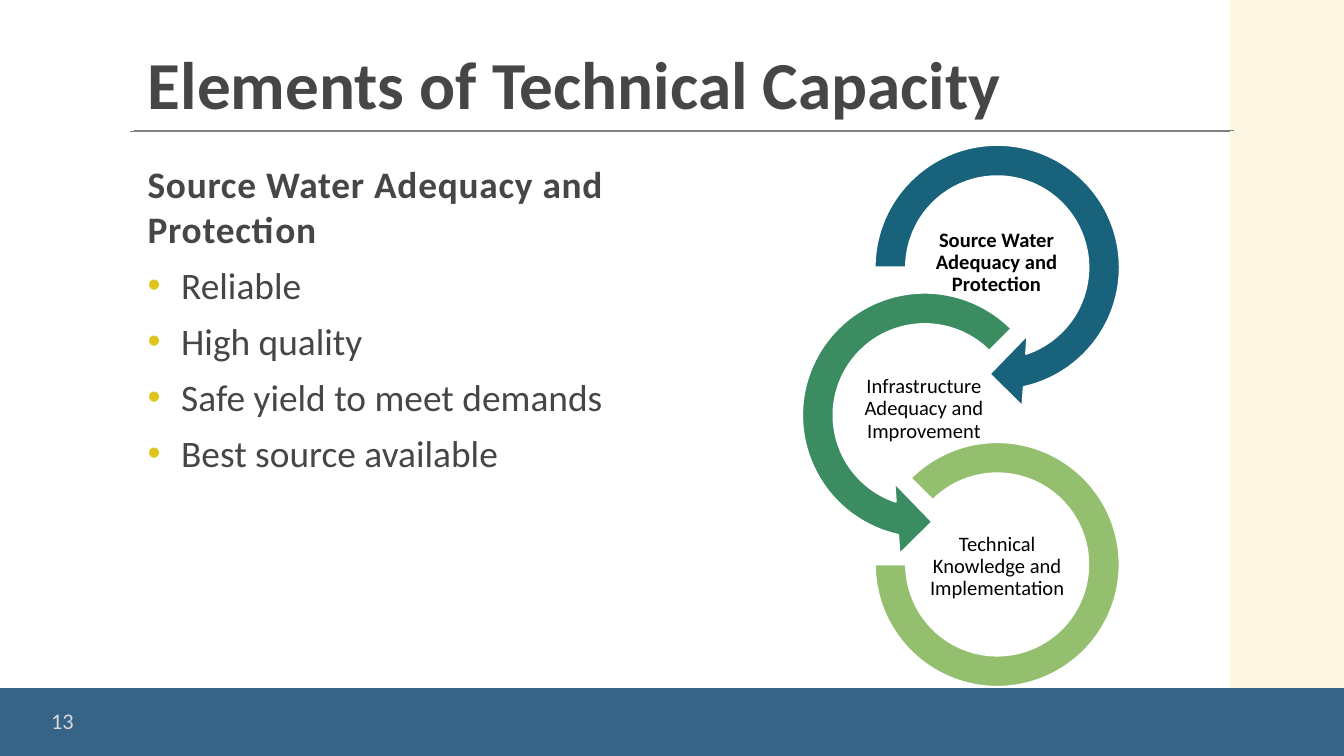
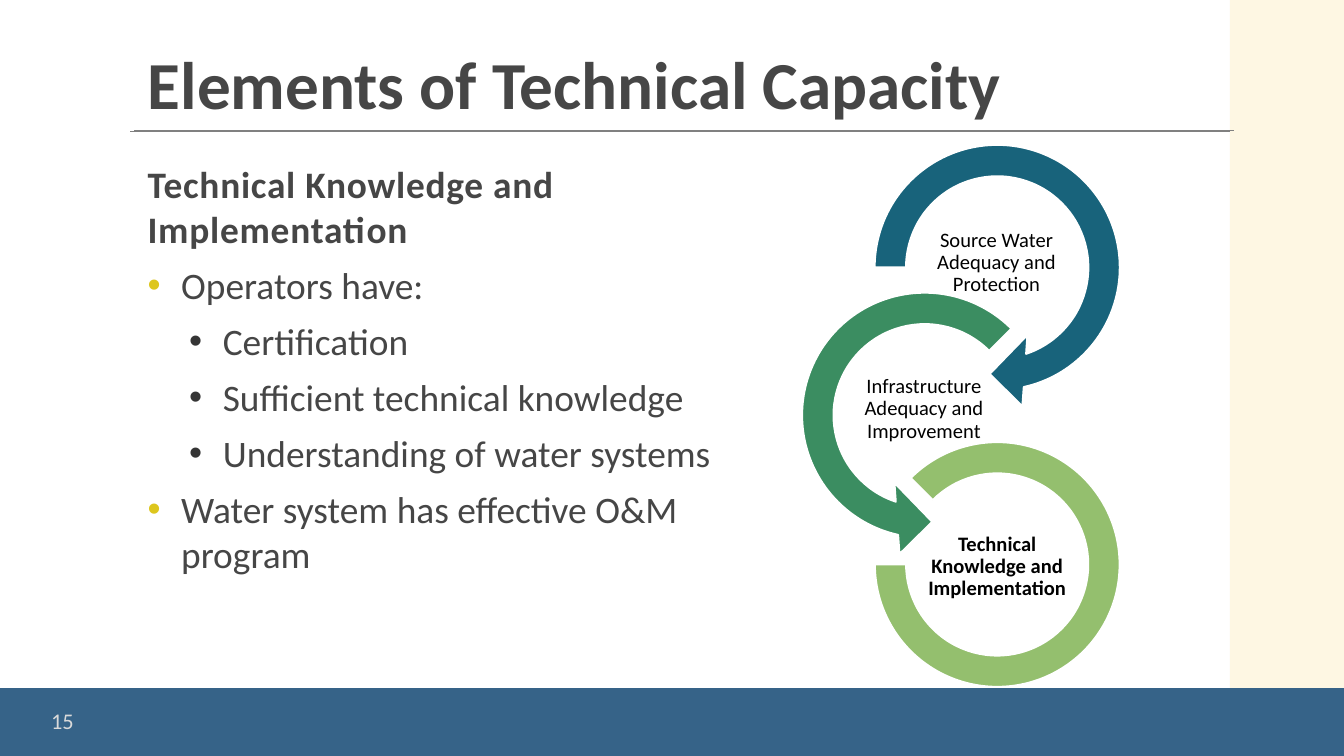
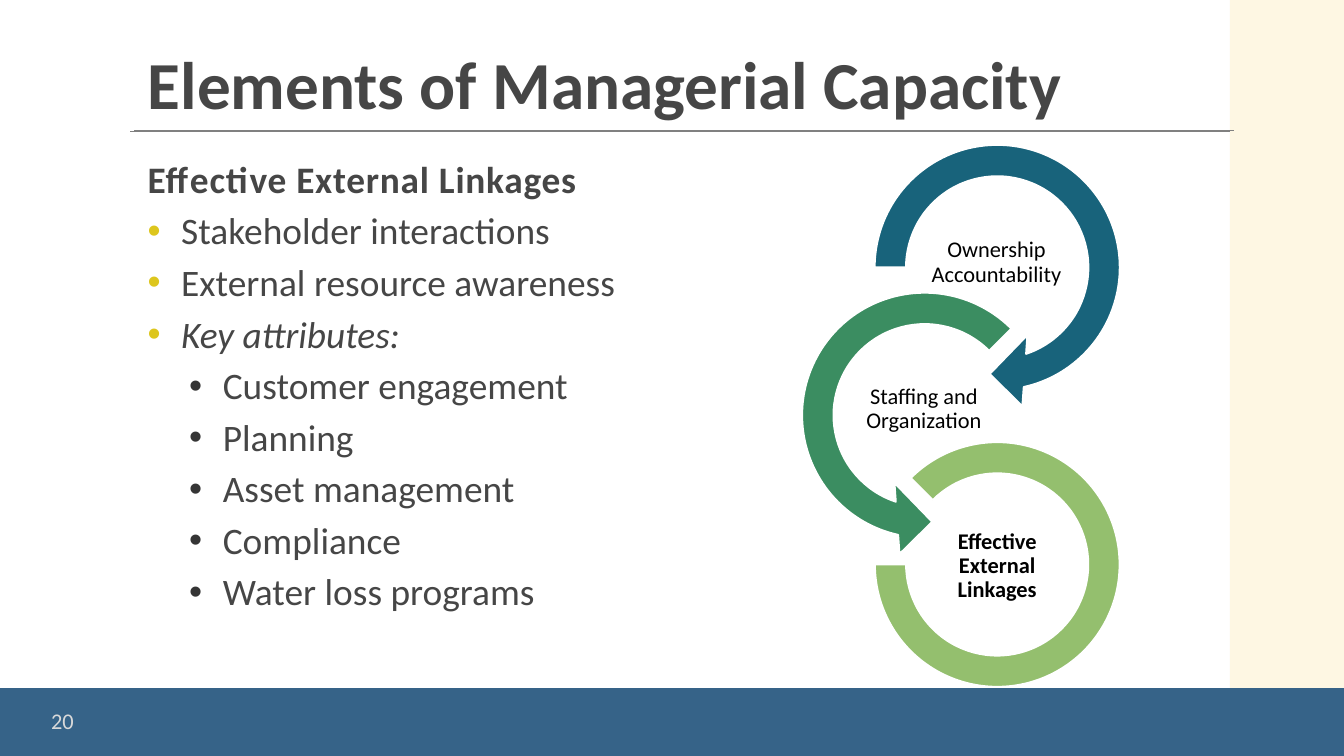
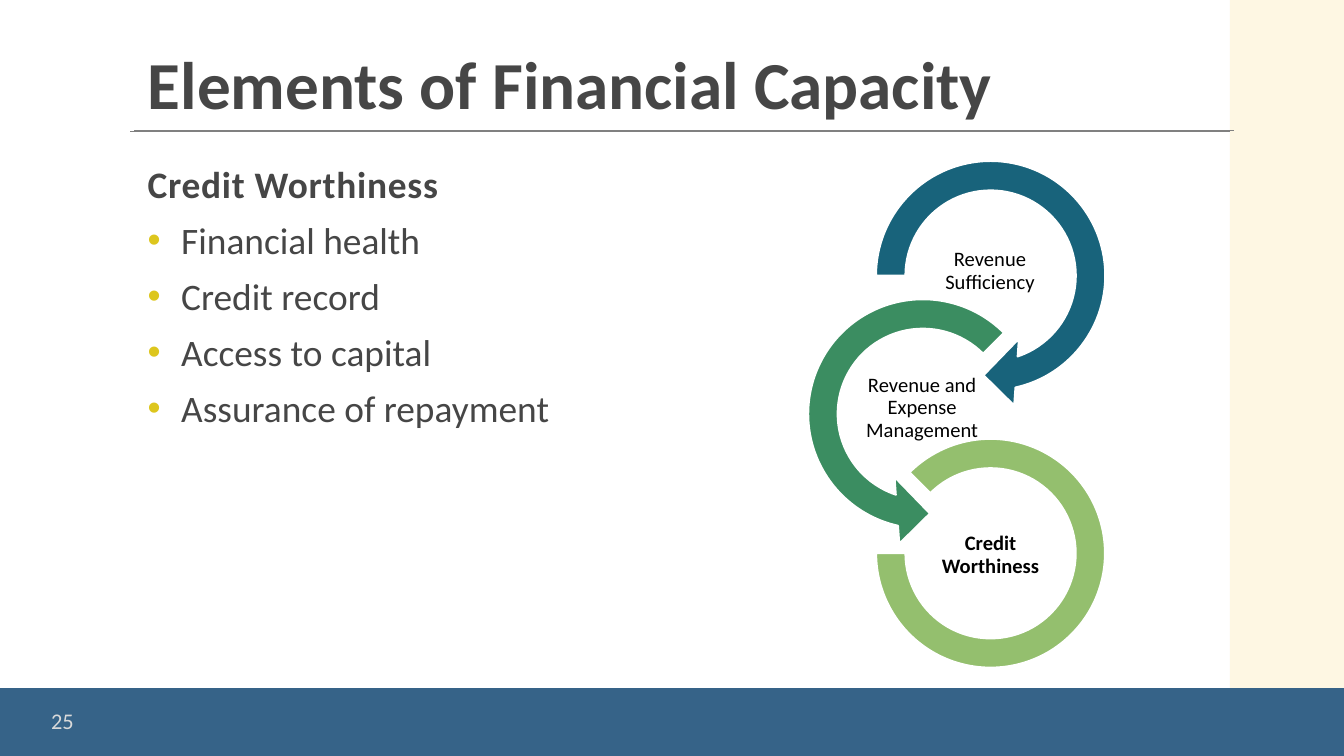
from lxml import etree
from pptx import Presentation
from pptx.dml.color import RGBColor
from pptx.enum import shapes, text
from pptx.oxml import ns
from pptx.util import Inches, Pt

FONT = "Calibri"
GREY = RGBColor(0x46, 0x46, 0x46)
DARK = RGBColor(0x35, 0x35, 0x35)
RULE = RGBColor(0x80, 0x80, 0x80)
PALE = RGBColor(0xD9, 0xD9, 0xD9)
GOLD = RGBColor(0xDD, 0xC6, 0x1D)
CREAM = RGBColor(0xFE, 0xF7, 0xE3)
BLUE = RGBColor(0x36, 0x63, 0x88)
TEAL = RGBColor(0x18, 0x63, 0x7B)
GREEN = RGBColor(0x3B, 0x8D, 0x61)
LIME = RGBColor(0x94, 0xBF, 0x6E)
BLACK = RGBColor(0, 0, 0)
WHITE = RGBColor(255, 255, 255)

LEFT, MID = text.PP_ALIGN.LEFT, text.PP_ALIGN.CENTER
KIND = shapes.MSO_SHAPE

# Bullet style by level: indent in inches and bullet colour
MARKS = {1: (0.25, GOLD), 2: (0.56, DARK)}

# Ring parts: shape, colour, offset, size, adjustments
RINGS = [
    (KIND.CIRCULAR_ARROW, TEAL, 0, 0, 2.12, (0.1098, 11.42, 45, 108, 0.125)),
    (KIND.LEFT_CIRCULAR_ARROW, GREEN, -0.54, 1.1, 2.12,
     (0.1098, 11.42, 63, 189, 0.125)),
    (KIND.BLOCK_ARC, LIME, 0.15, 2.36, 1.82, (135, 108, 0.1274)),
]
# Label boxes: offset, width, height
LABELS = [(0.52, 0.76, 1.07, 0.53), (-0.02, 1.85, 1.07, 0.53),
          (0.51, 2.99, 1.1, 0.59)]

# Each slide: number, title, body width, line spacing, body lines (level, text),
# ring start and scale, label size, ring labels, index of the bold label
TECH = ["Source Water Adequacy and Protection",
        "Infrastructure Adequacy and Improvement",
        "Technical Knowledge and Implementation"]
SLIDES = [
    ("13", "Elements of Technical Capacity", 4.46, 1,
     [(0, "Source Water Adequacy and Protection"),
      (1, "Reliable"),
      (1, "High quality"),
      (1, "Safe yield to meet demands"),
      (1, "Best source available")],
     (6.36, 0.93, 1), 11, TECH, 0),
    ("15", "Elements of Technical Capacity", 4.46, 1,
     [(0, "Technical Knowledge and Implementation"),
      (1, "Operators have:"),
      (2, "Certification"),
      (2, "Sufficient technical knowledge"),
      (2, "Understanding of water systems"),
      (1, "Water system has effective O&M program")],
     (6.36, 0.93, 1), 11, TECH, 2),
    ("20", "Elements of Managerial Capacity", 3.96, 0.9,
     [(0, "Effective External Linkages"),
      (1, "Stakeholder interactions"),
      (1, "External resource awareness"),
      (1, "Key attributes:"),
      (2, "Customer engagement"),
      (2, "Planning"),
      (2, "Asset management"),
      (2, "Compliance"),
      (2, "Water loss programs")],
     (6.36, 0.93, 1), 12,
     ["Ownership Accountability", "Staffing and Organization",
      "Effective External Linkages"], 2),
    ("25", "Elements of Financial Capacity", 3.96, 1,
     [(0, "Credit Worthiness"),
      (1, "Financial health"),
      (1, "Credit record"),
      (1, "Access to capital"),
      (1, "Assurance of repayment")],
     (6.38, 1.06, 0.935), 11,
     ["Revenue Sufficiency", "Revenue and Expense Management",
      "Credit Worthiness"], 2),
]


def write(box, words, size=20, color=GREY, bold=False, italic=False,
          align=LEFT, gap=1, after=0, level=0, track=0, inset=None,
          anchor=text.MSO_ANCHOR.TOP):
    """Put one paragraph into a box, after any that it already holds."""
    frame = box.text_frame
    frame.word_wrap = True
    frame.auto_size = text.MSO_AUTO_SIZE.NONE
    frame.vertical_anchor = anchor
    if inset is not None:
        frame.margin_left = frame.margin_right = Inches(inset)
        frame.margin_top = frame.margin_bottom = Inches(inset)
    para = frame.add_paragraph() if frame.text else frame.paragraphs[0]
    para.alignment = align
    para.line_spacing = gap
    para.space_before, para.space_after = Pt(0), Pt(after)
    if level:
        indent, tint = MARKS[level]
        para.level = level
        props = para._p.get_or_add_pPr()
        props.set("marL", str(Inches(indent)))
        props.set("indent", str(Inches(-0.25)))
        hue = etree.SubElement(props, ns.qn("a:buClr"))
        etree.SubElement(hue, ns.qn("a:srgbClr"), val=str(tint))
        etree.SubElement(props, ns.qn("a:buFont"), typeface="Arial")
        etree.SubElement(props, ns.qn("a:buChar"), char="•")
    run = para.add_run()
    run.text = words
    run.font.name, run.font.size = FONT, Pt(size)
    run.font.bold, run.font.italic = bold, italic
    run.font.color.rgb = color
    if track:
        run.font._element.set("spc", str(round(track * 100)))


def draw(home, kind, color, x, y, wide, high, edge=None):
    """Add a plain filled shape."""
    form = home.add_shape(kind, Inches(x), Inches(y), Inches(wide), Inches(high))
    form.shadow.inherit = False
    form.fill.solid()
    form.fill.fore_color.rgb = color
    if edge is None:
        form.line.fill.background()
    else:
        form.line.color.rgb = edge
        form.line.width = Pt(1)
    return form


deck = Presentation()
deck.slide_width, deck.slide_height = Inches(10), Inches(5.625)

for num, title, width, gap, lines, start, size, labels, strong in SLIDES:
    slide = deck.slides.add_slide(deck.slide_layouts[5])
    items = slide.shapes

    # Side band, footer band and double rule under the title
    draw(items, KIND.RECTANGLE, CREAM, 9.15, 0, 0.85, 5.62)
    draw(items, KIND.RECTANGLE, BLUE, 0, 5.12, 10, 0.51)
    for x1, x2, y in [(1, 9.18, 0.97), (0.97, 9.15, 0.98)]:
        rule = items.add_connector(shapes.MSO_CONNECTOR.STRAIGHT, Inches(x1),
                                   Inches(y), Inches(x2), Inches(y))
        rule.line.color.rgb = RULE
        rule.line.width = Pt(0.5)
        etree.SubElement(rule._element.spPr, ns.qn("a:effectLst"))

    # Title
    head = items.title
    head.left, head.top = Inches(1), Inches(0.14)
    head.width, head.height = Inches(8.15), Inches(0.83)
    write(head, title, size=36, bold=True, gap=0.85,
          anchor=text.MSO_ANCHOR.BOTTOM)

    # Body
    body = items.add_textbox(Inches(1), Inches(1.15), Inches(width), Inches(3.74))
    for level, words in lines:
        write(body, words, level=level, gap=gap, after=6, bold=level == 0,
              track=0 if level else 0.4, italic=words == "Key attributes:")

    # Rings and their labels
    left, top, scale = start
    group = items.add_group_shape().shapes
    for i, (kind, color, dx, dy, side, adjust) in enumerate(RINGS):
        ring = draw(group, kind, color, left + dx * scale, top + dy * scale,
                    side * scale, side * scale, edge=WHITE)
        for j, value in enumerate(adjust):
            ring.adjustments[j] = value
        dx, dy, wide, high = LABELS[i]
        label = group.add_textbox(
            Inches(left + dx * scale), Inches(top + dy * scale),
            Inches(wide * scale), Inches(high * scale))
        write(label, labels[i], size=size, color=BLACK, bold=i == strong,
              align=MID, gap=0.9, inset=0.01, anchor=text.MSO_ANCHOR.MIDDLE)

    # Slide number
    mark = items.add_textbox(Inches(0.11), Inches(5.21), Inches(0.71), Inches(0.3))
    write(mark, num, size=12, color=PALE, align=MID,
          anchor=text.MSO_ANCHOR.MIDDLE)

deck.save("out.pptx")
